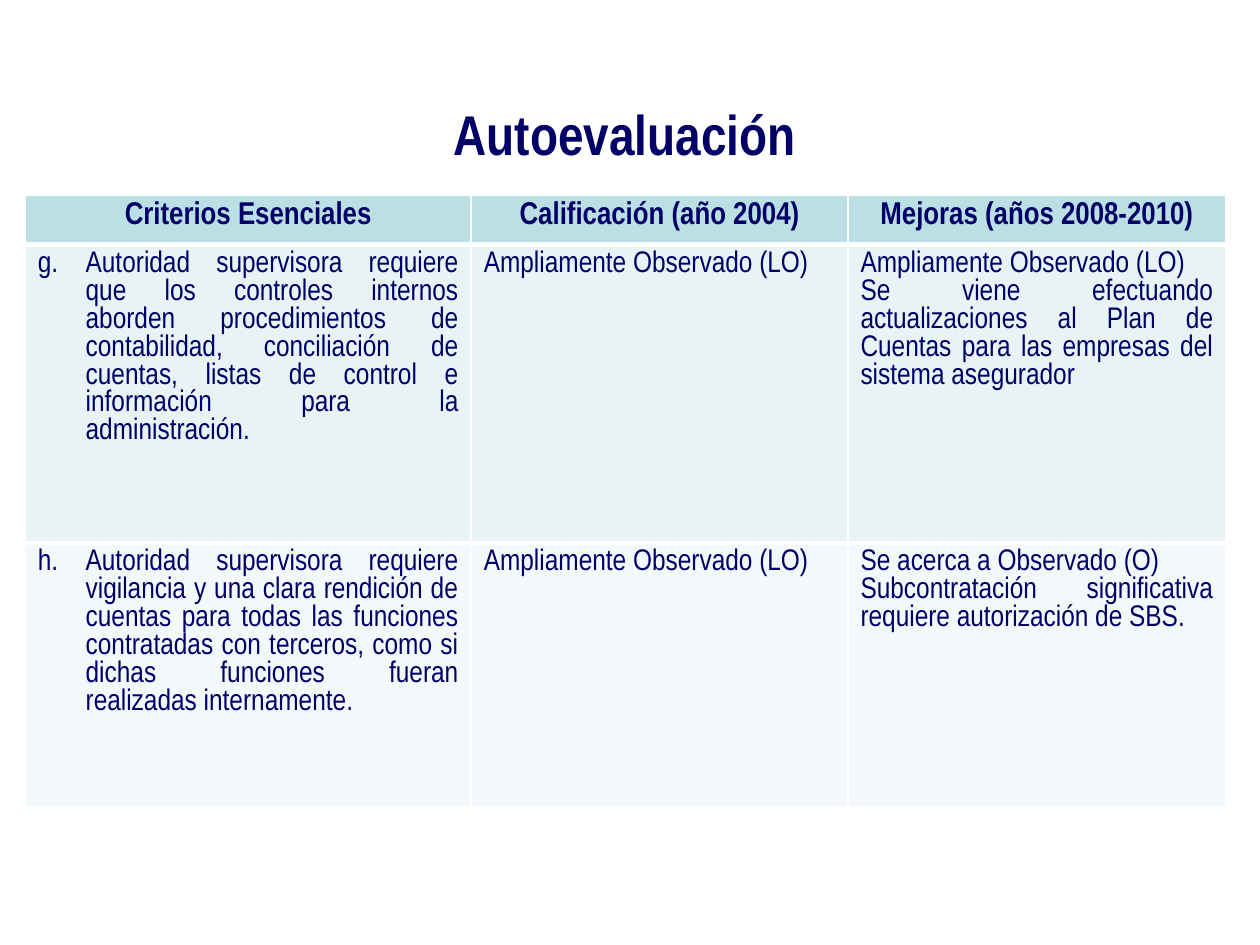
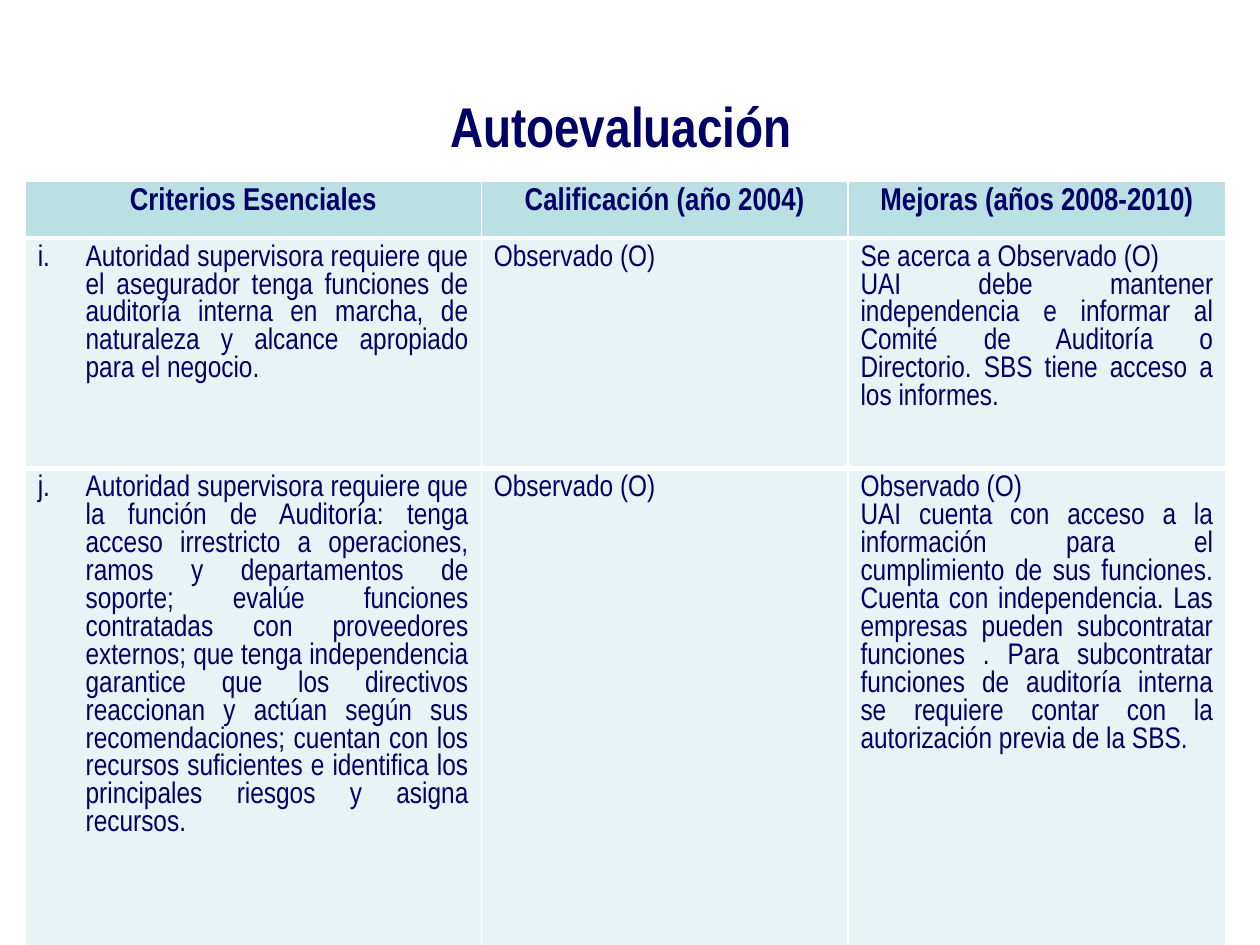
import pptx
import pptx.util
import pptx.dml.color
import pptx.enum.text
import pptx.oxml.ns
from lxml import etree

Inches, Pt = pptx.util.Inches, pptx.util.Pt
RGBColor = pptx.dml.color.RGBColor
ALIGN = pptx.enum.text.PP_ALIGN
qn = pptx.oxml.ns.qn

NAVY = RGBColor(0x00, 0x00, 0x66)
WHITE = RGBColor(0xFF, 0xFF, 0xFF)
TEAL = RGBColor(0xBB, 0xE0, 0xE3)
PALE = RGBColor(0xE7, 0xF3, 0xF4)
PALEST = RGBColor(0xF3, 0xF9, 0xFA)
FONT = "Arial Narrow"
TITLE = "Autoevaluación"
HEADERS = ["Criterios Esenciales", "Calificación (año 2004)", "Mejoras (años 2008-2010)"]

SLIDES = [
    {
        "title_at": (0.7, 0.73, 8.52, 0.64),
        "table_top": 1.55,
        "cols": [3.54, 2.99, 3.0],
        "heights": [0.39, 2.37, 2.09],
        "fills": [PALE, PALEST],
        "first_letter": 7,
        "rows": [
            ("Autoridad supervisora requiere que los controles internos aborden "
             "procedimientos de contabilidad, conciliación de cuentas, listas de "
             "control e información para la administración.",
             ["Ampliamente Observado (LO)"],
             ["Ampliamente Observado (LO)",
              "Se viene efectuando actualizaciones al Plan de Cuentas para las "
              "empresas del sistema asegurador"]),
            ("Autoridad supervisora requiere vigilancia y una clara rendición de "
             "cuentas para todas las funciones contratadas con terceros, como si "
             "dichas funciones fueran realizadas internamente.",
             ["Ampliamente Observado (LO)"],
             ["Se acerca a Observado (O)",
              "Subcontratación significativa requiere autorización de SBS."]),
        ],
    },
    {
        "title_at": (0.67, 0.68, 8.52, 0.63),
        "table_top": 1.44,
        "cols": [3.62, 2.91, 3.0],
        "heights": [0.45, 1.83, 3.79],
        "fills": [PALE, PALE],
        "first_letter": 9,
        "rows": [
            ("Autoridad supervisora requiere que el asegurador tenga funciones de "
             "auditoría interna en marcha, de naturaleza y alcance apropiado para "
             "el negocio.",
             ["Observado (O)"],
             ["Se acerca a Observado (O)",
              "UAI debe mantener independencia e informar al Comité de Auditoría o "
              "Directorio. SBS tiene acceso a los informes."]),
            ("Autoridad supervisora requiere que la función de Auditoría: tenga "
             "acceso irrestricto a operaciones, ramos y departamentos de soporte; "
             "evalúe funciones contratadas con proveedores externos; que tenga "
             "independencia garantice que los directivos reaccionan y actúan según "
             "sus recomendaciones; cuentan con los recursos suficientes e "
             "identifica los principales riesgos y asigna recursos.",
             ["Observado (O)"],
             ["Observado (O)",
              "UAI cuenta con acceso a la información para el cumplimiento de sus "
              "funciones. Cuenta con independencia. Las empresas pueden "
              "subcontratar funciones . Para subcontratar funciones de auditoría "
              "interna se requiere contar con la autorización previa de la SBS."]),
        ],
    },
]


def write(tf, texts, size, align, bold=False, letter=None):
    """Write one paragraph per text, lettered from the given position if any."""
    for i, text in enumerate(texts):
        p = tf.add_paragraph() if i else tf.paragraphs[0]
        p.alignment = align
        if letter:
            number(p, letter + i)
        r = p.add_run()
        r.text = text
        r.font.name = FONT
        r.font.size = Pt(size)
        r.font.bold = bold
        r.font.color.rgb = NAVY


def number(p, start):
    """Give a paragraph a lettered bullet with a hanging indent."""
    pPr = p._p.get_or_add_pPr()
    pPr.set("marL", str(Inches(0.38)))
    pPr.set("indent", str(-Inches(0.38)))
    font = etree.SubElement(pPr, qn("a:buFont"))
    font.set("typeface", "+mj-lt")
    bullet = etree.SubElement(pPr, qn("a:buAutoNum"))
    bullet.set("type", "alphaLcPeriod")
    bullet.set("startAt", str(start))


def style_cell(cell, fill, top, bottom):
    """Fill a cell and draw its white borders, with widths in points."""
    tcPr = cell._tc.get_or_add_tcPr()
    for side, width in (("L", 1), ("R", 1), ("T", top), ("B", bottom)):
        ln = etree.SubElement(tcPr, qn("a:ln" + side))
        ln.set("w", str(Pt(width)))
        solid = etree.SubElement(ln, qn("a:solidFill"))
        etree.SubElement(solid, qn("a:srgbClr")).set("val", str(WHITE))
    cell.fill.solid()
    cell.fill.fore_color.rgb = fill


def add_title(s, at):
    """Add the centred slide title."""
    tf = s.shapes.add_textbox(*map(Inches, at)).text_frame
    tf.word_wrap = True
    tf.vertical_anchor = pptx.enum.text.MSO_ANCHOR.BOTTOM
    write(tf, [TITLE], 32, ALIGN.CENTER, bold=True)


def add_criteria_table(s, data):
    """Add the table of criteria, ratings and improvements."""
    cols, heights = data["cols"], data["heights"]
    table = s.shapes.add_table(
        len(heights), len(cols), Inches(0.2), Inches(data["table_top"]),
        Inches(sum(cols)), Inches(sum(heights))).table
    for col, width in zip(table.columns, cols):
        col.width = Inches(width)
    for row, height in zip(table.rows, heights):
        row.height = Inches(height)

    for cell, header in zip(table.rows[0].cells, HEADERS):
        style_cell(cell, TEAL, 1, 3)
        write(cell.text_frame, [header], 18, ALIGN.CENTER, bold=True)
    for i, (criterion, rating, progress) in enumerate(data["rows"]):
        cells = list(table.rows[i + 1].cells)
        bottom = 1 if i == len(data["rows"]) - 1 else 3
        for cell in cells:
            style_cell(cell, data["fills"][i], 3, bottom)
        write(cells[0].text_frame, [criterion], 17, ALIGN.JUSTIFY,
              letter=data["first_letter"] + i)
        write(cells[1].text_frame, rating, 17, ALIGN.JUSTIFY)
        write(cells[2].text_frame, progress, 17, ALIGN.JUSTIFY)


def main():
    """Build and save the presentation."""
    prs = pptx.Presentation()
    prs.slide_width, prs.slide_height = Inches(10), Inches(7.5)
    for data in SLIDES:
        s = prs.slides.add_slide(prs.slide_layouts[6])
        add_criteria_table(s, data)
        add_title(s, data["title_at"])
    prs.save("out.pptx")


if __name__ == "__main__":
    main()
